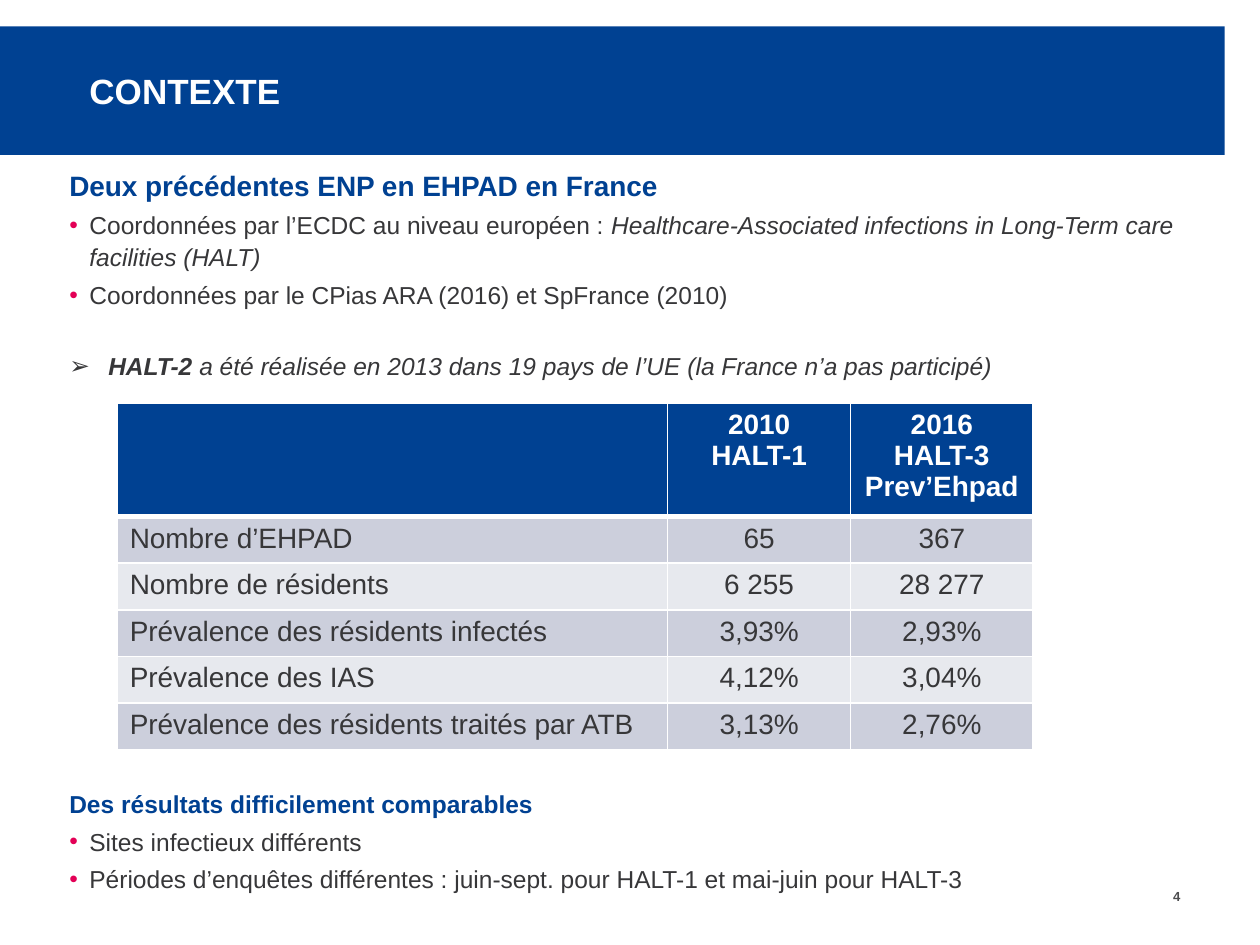
from lxml import etree
from pptx import Presentation
from pptx.dml.color import RGBColor
from pptx.enum.shapes import MSO_SHAPE
from pptx.enum.text import MSO_ANCHOR, PP_ALIGN
from pptx.oxml.ns import qn
from pptx.util import Inches, Pt

RECT = MSO_SHAPE.RECTANGLE
MIDDLE = MSO_ANCHOR.MIDDLE
LEFT, CENTER, RIGHT = PP_ALIGN.LEFT, PP_ALIGN.CENTER, PP_ALIGN.RIGHT
FONT = "Arial"
COLORS = {"blue": "004192", "pink": "E30056", "text": "373739", "gray": "4D4D4F",
          "white": "FFFFFF", "dark": "CCCFDC", "light": "E7E9EE"}

CONTEXT = [
    ("head", 16, 0, [("Deux précédentes ENP en EHPAD en France", "b")]),
    ("dot", 14, 3, [("Coordonnées par l’ECDC au niveau européen : ", ""),
                    ("Healthcare-Associated infections in Long-Term care facilities (HALT)", "i")]),
    ("dot", 14, 3, [("Coordonnées par le CPias ARA (2016) et SpFrance (2010)", "")]),
    ("arrow", 14, 22, [("HALT-2 ", "bi"),
                       ("a été réalisée en 2013 dans 19 pays de l’UE "
                        "(la France n’a pas participé)", "i")]),
]
RESULTS = [
    ("head", 14, 0, [("Des résultats difficilement comparables", "b")]),
    ("dot", 14, 3, [("Sites infectieux différents", "")]),
    ("dot", 14, 3, [("Périodes d’enquêtes différentes : juin-sept. pour HALT-1 "
                     "et mai-juin pour HALT-3", "")]),
]
ROWS = [
    ("", "2010\nHALT-1", "2016\nHALT-3\vPrev’Ehpad"),
    ("Nombre d’EHPAD", "65", "367"),
    ("Nombre de résidents", "6 255", "28 277"),
    ("Prévalence des résidents infectés", "3,93%", "2,93%"),
    ("Prévalence des IAS", "4,12%", "3,04%"),
    ("Prévalence des résidents traités par ATB", "3,13%", "2,76%"),
]
BULLETS = {"dot": ("•", "pink", 0.16), "arrow": ("➢", "text", 0.31)}


def rgb(name):
    """Return a named colour."""
    return RGBColor.from_string(COLORS[name])


def style(para, size, color, bold=None):
    """Set the font of a paragraph."""
    font = para.font
    font.name, font.size, font.bold = FONT, Pt(size), bold
    font.color.rgb = rgb(color)


def add_box(slide, x, y, w, h, wrap=True):
    """Add a text box with narrow margins and return its frame."""
    frame = slide.shapes.add_textbox(Inches(x), Inches(y), Inches(w), Inches(h)).text_frame
    frame.word_wrap = wrap
    frame.margin_left = frame.margin_right = Inches(0.04)
    frame.margin_top = frame.margin_bottom = 0
    return frame


def add_bullet(para, kind):
    """Give a paragraph its bullet and hanging indent."""
    char, color, indent = BULLETS[kind]
    props = para._p.get_or_add_pPr()
    props.set("marL", str(Inches(indent)))
    props.set("indent", str(-Inches(indent)))
    tint = etree.SubElement(props, qn("a:buClr"))
    etree.SubElement(tint, qn("a:srgbClr"), val=COLORS[color])
    etree.SubElement(props, qn("a:buFont"), typeface=FONT)
    etree.SubElement(props, qn("a:buChar"), char=char)


def add_header(slide, x, y, w, h):
    """Draw the title band."""
    band = slide.shapes.add_shape(RECT, Inches(x), Inches(y), Inches(w), Inches(h))
    band.shadow.inherit = False
    band.fill.solid()
    band.fill.fore_color.rgb = rgb("blue")
    band.line.fill.background()
    frame = add_box(slide, x + 0.67, y, 7.4, h)
    frame.vertical_anchor = MIDDLE
    para = frame.paragraphs[0]
    para.text = "CONTEXTE"
    style(para, 20, "white", True)


def add_body(slide, x, y, w, h, items):
    """Write a heading and its points."""
    frame = add_box(slide, x, y, w, h)
    for num, (kind, size, gap, runs) in enumerate(items):
        para = frame.add_paragraph() if num else frame.paragraphs[0]
        para.line_spacing = 1.1
        para.space_before = Pt(gap)
        if kind in BULLETS:
            add_bullet(para, kind)
        style(para, size, "blue" if kind == "head" else "text")
        for text, marks in runs:
            run = para.add_run()
            run.text = text
            run.font.bold, run.font.italic = "b" in marks, "i" in marks


def add_edges(cell, base):
    """Draw white cell borders, the lower one in the given width."""
    props = cell._tc.get_or_add_tcPr()
    for num, (side, width) in enumerate((("L", 1), ("R", 1), ("T", 1), ("B", base))):
        line = etree.Element(qn("a:ln" + side), w=str(Pt(width)))
        fill = etree.SubElement(line, qn("a:solidFill"))
        etree.SubElement(fill, qn("a:srgbClr"), val=COLORS["white"])
        props.insert(num, line)


def add_grid(slide, x, y, widths, heights):
    """Draw the table of survey figures."""
    table = slide.shapes.add_table(len(heights), len(widths), Inches(x), Inches(y),
                                   Inches(sum(widths)), Inches(sum(heights))).table
    for col, width in zip(table.columns, widths):
        col.width = Inches(width)
    for row, height in zip(table.rows, heights):
        row.height = Inches(height)
    for r, texts in enumerate(ROWS):
        shade = ("dark" if r % 2 else "light") if r else "blue"
        for c, text in enumerate(texts):
            cell = table.cell(r, c)
            cell.fill.solid()
            cell.fill.fore_color.rgb = rgb(shade)
            add_edges(cell, 1 if r else 3)
            cell.text = text
            for para in cell.text_frame.paragraphs:
                para.alignment = CENTER if c else LEFT
                style(para, 16, "text" if r else "white", not r)


def add_number(slide, x, y, w, h):
    """Write the page number."""
    para = add_box(slide, x, y, w, h, False).paragraphs[0]
    para.text = "4"
    para.alignment = RIGHT
    style(para, 7.5, "gray", True)


def main():
    """Build the slide and save it."""
    deck = Presentation()
    deck.slide_width, deck.slide_height = Inches(10), Inches(7.5)
    slide = deck.slides.add_slide(deck.slide_layouts[6])
    add_header(slide, 0, 0.21, 9.72, 1.02)
    add_body(slide, 0.51, 1.31, 9.06, 1.8, CONTEXT)
    add_body(slide, 0.51, 6.24, 9.06, 0.9, RESULTS)
    add_grid(slide, 0.93, 3.2, [4.37, 1.45, 1.45], [0.9] + [0.37] * 5)
    add_number(slide, 9.14, 7.05, 0.27, 0.13)
    deck.save("out.pptx")


if __name__ == "__main__":
    main()
